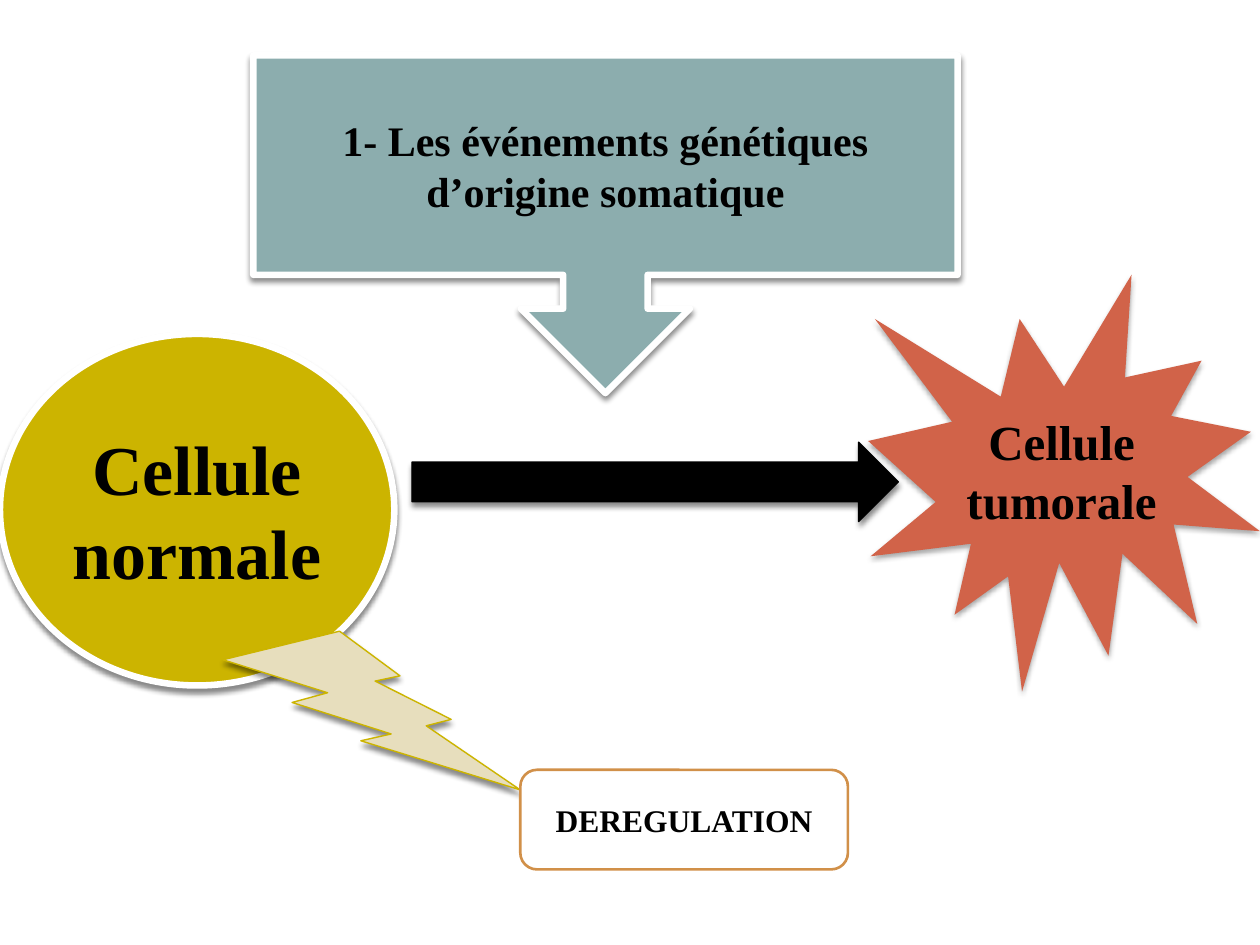
from lxml import etree
from pptx import Presentation
from pptx.dml.color import RGBColor
from pptx.enum import shapes, text
from pptx.oxml import ns
from pptx.util import Inches, Pt

BLACK = RGBColor(0x00, 0x00, 0x00)
WHITE = RGBColor(0xFF, 0xFF, 0xFF)
TEAL = RGBColor(0x8C, 0xAD, 0xAE)
GOLD = RGBColor(0xCC, 0xB4, 0x00)
RED = RGBColor(0xD1, 0x63, 0x49)
BEIGE = RGBColor(0xE7, 0xDE, 0xBD)
ORANGE = RGBColor(0xD1, 0x90, 0x49)

FONT = "Times New Roman"
KIND = shapes.MSO_SHAPE

FIGURES = [
    dict(kind=KIND.DOWN_ARROW_CALLOUT, box=(2.01, 0.44, 5.59, 2.68), fill=TEAL,
         line=(WHITE, 3.75), shadow=(45, 2.4),
         label="1- Les événements génétiques d’origine somatique", size=24),
    dict(kind=KIND.OVAL, box=(0, 2.65, 3.13, 2.79), fill=GOLD,
         line=(WHITE, 3.75), shadow=(45, 2.4), label="Cellule normale", size=40),
    dict(kind=KIND.RIGHT_ARROW, box=(3.27, 3.51, 3.86, 0.63), fill=BLACK,
         line=(BLACK, 0.79), shadow=(45, 2.4)),
    dict(kind=KIND.EXPLOSION1, box=(6.89, 2.18, 3.11, 3.31), fill=RED,
         shadow=(35, 2), label="Cellule tumorale", size=28),
    dict(kind=KIND.LIGHTNING_BOLT, box=(1.77, 5.01, 2.36, 1.26), fill=BEIGE,
         line=(GOLD, 0.79), shadow=(45, 2.4)),
    dict(kind=KIND.ROUNDED_RECTANGLE, box=(4.13, 6.11, 2.6, 0.79), fill=WHITE,
         line=(ORANGE, 1.5), label="DEREGULATION", size=18),
]


def write_text(shape, content, size, color=BLACK, bold=True):
    frame = shape.text_frame
    frame.word_wrap = True
    frame.vertical_anchor = text.MSO_ANCHOR.MIDDLE
    paragraph = frame.paragraphs[0]
    paragraph.alignment = text.PP_ALIGN.CENTER
    run = paragraph.add_run()
    run.text = content
    run.font.name = FONT
    run.font.size = Pt(size)
    run.font.bold = bold
    run.font.color.rgb = color


def add_shadow(shape, opacity, distance, blur=3):
    effects = shape._element.spPr.find(ns.qn("a:effectLst"))
    outer = etree.SubElement(
        effects, ns.qn("a:outerShdw"), blurRad=str(Pt(blur)),
        dist=str(Pt(distance)), dir="5400000", algn="ctr", rotWithShape="0")
    color = etree.SubElement(outer, ns.qn("a:srgbClr"), val=str(BLACK))
    etree.SubElement(color, ns.qn("a:alpha"), val=str(opacity * 1000))


def add_figure(slide, kind, box, fill, line=None, shadow=None, label=None, size=None):
    shape = slide.shapes.add_shape(kind, *map(Inches, box))
    shape.fill.solid()
    shape.fill.fore_color.rgb = fill
    if line:
        color, width = line
        shape.line.color.rgb = color
        shape.line.width = Pt(width)
    else:
        shape.line.fill.background()
    shape.shadow.inherit = False
    if shadow:
        add_shadow(shape, *shadow)
    if label:
        write_text(shape, label, size=size)


def main():
    presentation = Presentation()
    presentation.slide_width = Inches(10)
    presentation.slide_height = Inches(7.5)
    slide = presentation.slides.add_slide(presentation.slide_layouts[6])
    for figure in FIGURES:
        add_figure(slide, **figure)
    presentation.save("out.pptx")


if __name__ == "__main__":
    main()
